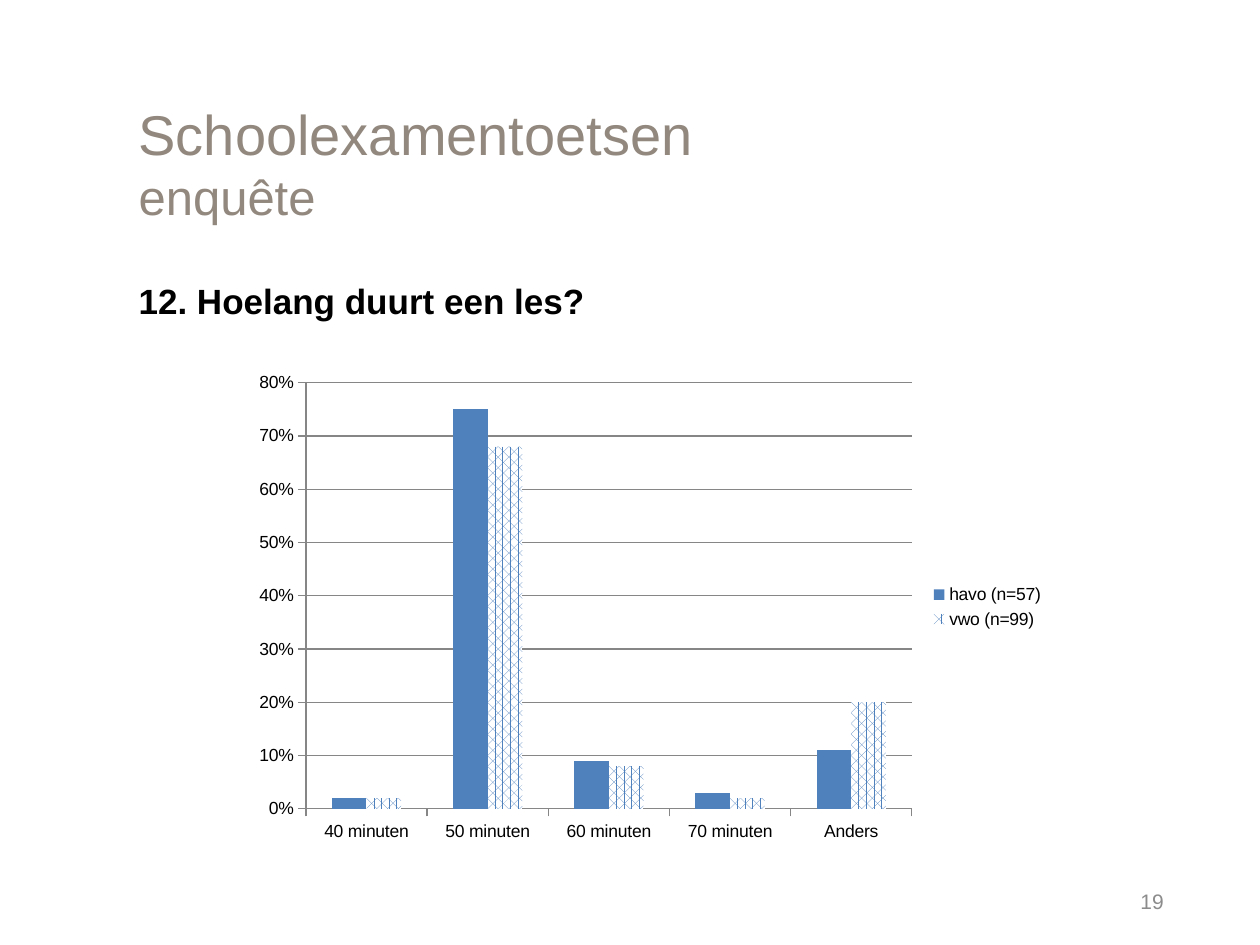
from lxml import etree
from pptx import Presentation
from pptx.chart.data import CategoryChartData
from pptx.dml.color import RGBColor
from pptx.enum.chart import XL_CHART_TYPE, XL_LEGEND_POSITION, XL_TICK_MARK
from pptx.enum.dml import MSO_PATTERN
from pptx.enum.text import MSO_ANCHOR, MSO_AUTO_SIZE, PP_ALIGN
from pptx.oxml.ns import qn
from pptx.util import Cm, Pt

COLUMNS = XL_CHART_TYPE.COLUMN_CLUSTERED
RIGHT_SIDE = XL_LEGEND_POSITION.RIGHT
OUT, NONE = XL_TICK_MARK.OUTSIDE, XL_TICK_MARK.NONE
DOTS = MSO_PATTERN.PERCENT_60
MIDDLE, TOP = MSO_ANCHOR.MIDDLE, MSO_ANCHOR.TOP
FIXED = MSO_AUTO_SIZE.NONE
LEFT, RIGHT = PP_ALIGN.LEFT, PP_ALIGN.RIGHT

TAUPE = RGBColor(0x92, 0x88, 0x7E)
BLACK = RGBColor(0x00, 0x00, 0x00)
GRAY = RGBColor(0x8C, 0x8C, 0x8C)
RULE = RGBColor(0x86, 0x86, 0x86)
BLUE = RGBColor(0x4F, 0x81, 0xBD)
WHITE = RGBColor(0xFF, 0xFF, 0xFF)


def put(item, **values):
    for name, value in values.items():
        setattr(item, name, value)


def style(font, size, color, bold=False):
    put(font, name="Arial", size=Pt(size), bold=bold)
    font.color.rgb = color


deck = Presentation()
put(deck, slide_width=Cm(25.4), slide_height=Cm(19.05))
slide = deck.slides.add_slide(deck.slide_layouts[1])

# Title in two sizes
title = slide.shapes.title
put(title, left=Cm(2.54), top=Cm(1.69), width=Cm(21.17), height=Cm(3.17))
put(title.text_frame, vertical_anchor=MIDDLE, auto_size=FIXED)
para = title.text_frame.paragraphs[0]
para.alignment = LEFT
for text, size in (("Schoolexamentoetsen", 32), ("enquête", 28)):
    if para.runs:
        para.add_line_break()
    run = para.add_run()
    run.text = text
    style(run.font, size, TAUPE)

# Question
body = slide.placeholders[1]
put(body, left=Cm(2.54), top=Cm(5.5), width=Cm(21.17), height=Cm(11.43))
put(body.text_frame, vertical_anchor=TOP, auto_size=FIXED)
para = body.text_frame.paragraphs[0]
para.text = "12. Hoelang duurt een les?"
para.space_before = Pt(0)
props = para._p.get_or_add_pPr()
for name in ("marL", "indent"):
    props.set(name, "0")
etree.SubElement(props, qn("a:buNone"))
style(para.font, 20, BLACK, True)

# Page number
page = slide.shapes.add_textbox(Cm(19.05), Cm(17.65), Cm(4.66), Cm(1.02))
put(page.text_frame, word_wrap=True, vertical_anchor=MIDDLE)
para = page.text_frame.paragraphs[0]
put(para, text="19", alignment=RIGHT)
style(para.font, 12, GRAY)

# Chart of lesson lengths
data = CategoryChartData(number_format="0%")
data.categories = ["40 minuten", "50 minuten", "60 minuten", "70 minuten", "Anders"]
data.add_series("havo (n=57)", [0.02, 0.75, 0.09, 0.03, 0.11])
data.add_series("vwo (n=99)", [0.02, 0.68, 0.08, 0.02, 0.2])
chart = slide.shapes.add_chart(
    COLUMNS, Cm(4.9), Cm(7.32), Cm(16.41), Cm(9.83), data).chart
put(chart, has_title=False, has_legend=True)
style(chart.font, 10, BLACK)
put(chart.legend, position=RIGHT_SIDE, include_in_layout=False)

# Columns
plot = chart.plots[0]
put(plot, gap_width=150, overlap=0, vary_by_categories=False)
havo, vwo = plot.series
havo.format.fill.solid()
havo.format.fill.fore_color.rgb = BLUE
fill = vwo.format.fill
fill.patterned()
fill.pattern = DOTS
fill.fore_color.rgb = BLUE
fill.back_color.rgb = WHITE

# Axes and grid
scale = chart.value_axis
put(scale, minimum_scale=0, maximum_scale=0.8, major_unit=0.1,
    has_major_gridlines=True)
put(scale.tick_labels, number_format="0%", number_format_is_linked=False)
for axis in (chart.category_axis, scale):
    put(axis, major_tick_mark=OUT, minor_tick_mark=NONE)
for part in (chart.category_axis, scale, scale.major_gridlines):
    part.format.line.color.rgb = RULE
    part.format.line.width = Pt(0.75)

deck.save("out.pptx")
